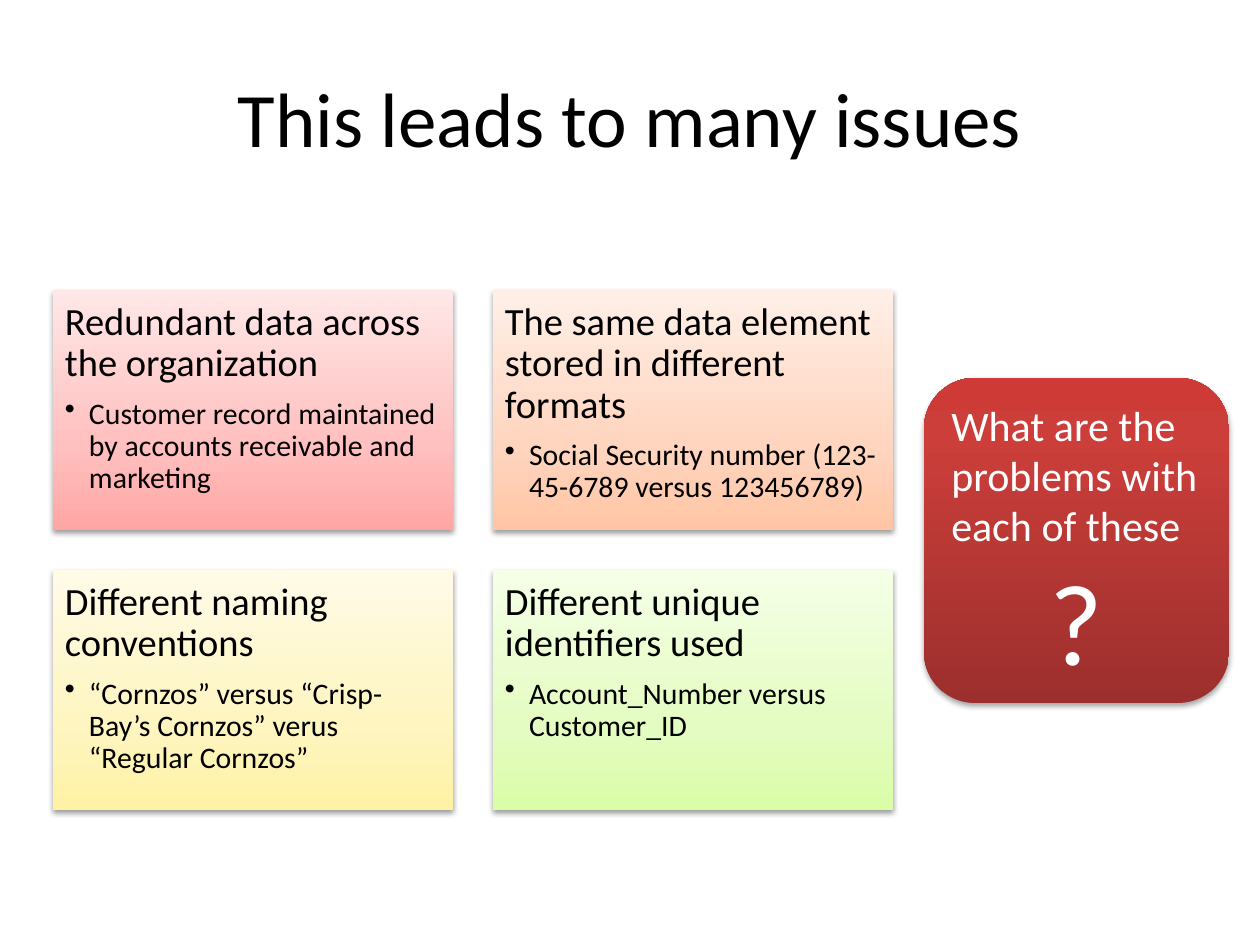
import dataclasses

import pptx
import pptx.dml.color
import pptx.enum.shapes
import pptx.enum.text
import pptx.oxml
import pptx.oxml.ns
import pptx.util
from lxml import etree

PX = 914400 / 126
SHAPES = pptx.enum.shapes.MSO_SHAPE
ALIGN = pptx.enum.text.PP_ALIGN
ANCHOR = pptx.enum.text.MSO_ANCHOR


@dataclasses.dataclass(frozen=True)
class Theme:
    font: str = "Calibri"
    dark: str = "000000"
    light: str = "FFFFFF"
    title: int = 44
    heading: int = 22
    detail: int = 17
    prompt: int = 24
    mark: int = 66
    pink: tuple = ((0, "FFA6A5"), (35, "FFC0BF"), (100, "FFE7E7"))
    orange: tuple = ((0, "FFC5A5"), (35, "FFD5BF"), (100, "FFEFE7"))
    yellow: tuple = ((0, "FFF2A5"), (35, "FEF5C0"), (100, "FFFBE7"))
    green: tuple = ((0, "DAFDA7"), (35, "E4FCC2"), (100, "F5FFE7"))
    red: tuple = ((0, "9C2F2D"), (80, "CB3E3A"), (100, "CE3B37"))


def px(length):
    return pptx.util.Emu(round(length * PX))


def add_element(parent, tag, **attributes):
    element = etree.SubElement(parent, pptx.oxml.ns.qn(tag))
    for name, value in attributes.items():
        element.set(name, str(value))
    return element


class SlideBuilder:
    def __init__(self, page, theme):
        self.page = page
        self.theme = theme

    def set_text(self, para, text, size, color, align=ALIGN.LEFT):
        para.text = text
        para.alignment = align
        para.font.name = self.theme.font
        para.font.size = pptx.util.Pt(size)
        para.font.color.rgb = pptx.dml.color.RGBColor.from_string(color)

    def title(self, text, left, top, width, height):
        box = self.page.shapes.title
        box.left, box.top, box.width, box.height = map(px, (left, top, width, height))
        box.text_frame.vertical_anchor = ANCHOR.MIDDLE
        self.set_text(box.text_frame.paragraphs[0], text, self.theme.title,
                      self.theme.dark, ALIGN.CENTER)

    def panel(self, kind, bounds, stops, shadow_alpha, shadow_distance):
        """Add a shape with an upward gradient and a soft shadow below it."""
        box = self.page.shapes.add_shape(kind, *map(px, bounds))
        box.fill.gradient()
        box.fill.gradient_angle = 90
        stop_list = box._element.spPr.find(".//" + pptx.oxml.ns.qn("a:gsLst"))
        for old_stop in list(stop_list):
            stop_list.remove(old_stop)
        for position, color in stops:
            stop = add_element(stop_list, "a:gs", pos=position * 1000)
            add_element(stop, "a:srgbClr", val=color)
        box.line.fill.background()
        box.shadow.inherit = False
        effects = box._element.spPr.find(pptx.oxml.ns.qn("a:effectLst"))
        shadow = add_element(effects, "a:outerShdw", blurRad=pptx.util.Pt(3.1),
                             dist=pptx.util.Pt(shadow_distance), dir=5400000,
                             rotWithShape=0)
        tint = add_element(shadow, "a:srgbClr", val=self.theme.dark)
        add_element(tint, "a:alpha", val=shadow_alpha * 1000)
        box.text_frame.word_wrap = True
        box.text_frame.vertical_anchor = ANCHOR.TOP
        return box

    def card(self, bounds, stops, heading, detail):
        frame = self.panel(SHAPES.RECTANGLE, bounds, stops, 38, 1.6).text_frame
        frame.margin_left = frame.margin_right = px(12)
        frame.margin_top = frame.margin_bottom = px(12)
        first, second = frame.paragraphs[0], frame.add_paragraph()
        self.set_text(first, heading, self.theme.heading, self.theme.dark)
        self.set_text(second, detail, self.theme.detail, self.theme.dark)
        first.line_spacing = second.line_spacing = 0.9
        first.space_after = pptx.util.Pt(7.7)
        second.level = 1
        properties = second._p.get_or_add_pPr()
        properties.set("marL", str(px(24)))
        properties.set("indent", str(-px(24)))
        bullet = pptx.oxml.parse_xml(
            f'<a:buChar {pptx.oxml.ns.nsdecls("a")} char="•"/>')
        properties.find(pptx.oxml.ns.qn("a:defRPr")).addprevious(bullet)

    def callout(self, bounds, stops, prompt, mark):
        frame = self.panel(SHAPES.ROUNDED_RECTANGLE, bounds, stops, 35, 1.8).text_frame
        self.set_text(frame.paragraphs[0], prompt, self.theme.prompt, self.theme.light)
        self.set_text(frame.add_paragraph(), mark, self.theme.mark,
                      self.theme.light, ALIGN.CENTER)


def main():
    deck = pptx.Presentation()
    deck.slide_width, deck.slide_height = px(1260), px(945)
    theme = Theme()
    builder = SlideBuilder(deck.slides.add_slide(deck.slide_layouts[5]), theme)
    builder.title("This leads to many issues", 63, 38, 1134, 158)

    issues = [
        (theme.pink, "Redundant data across the organization",
         "Customer record maintained by accounts receivable and marketing"),
        (theme.orange, "The same data element stored in different formats",
         "Social Security number (123-45-6789 versus 123456789)"),
        (theme.yellow, "Different naming conventions",
         "“Cornzos” versus “Crisp-Bay’s Cornzos” verus “Regular Cornzos”"),
        (theme.green, "Different unique identifiers used",
         "Account_Number versus Customer_ID"),
    ]
    width, height, gap = 400, 240, 40
    for index, (stops, heading, detail) in enumerate(issues):
        row, column = divmod(index, 2)
        bounds = (53 + column * (width + gap), 290 + row * (height + gap), width, height)
        builder.card(bounds, stops, heading, detail)

    builder.callout((924, 378, 305, 325), theme.red,
                    "What are the problems with each of these", "?")
    deck.save("out.pptx")


if __name__ == "__main__":
    main()
